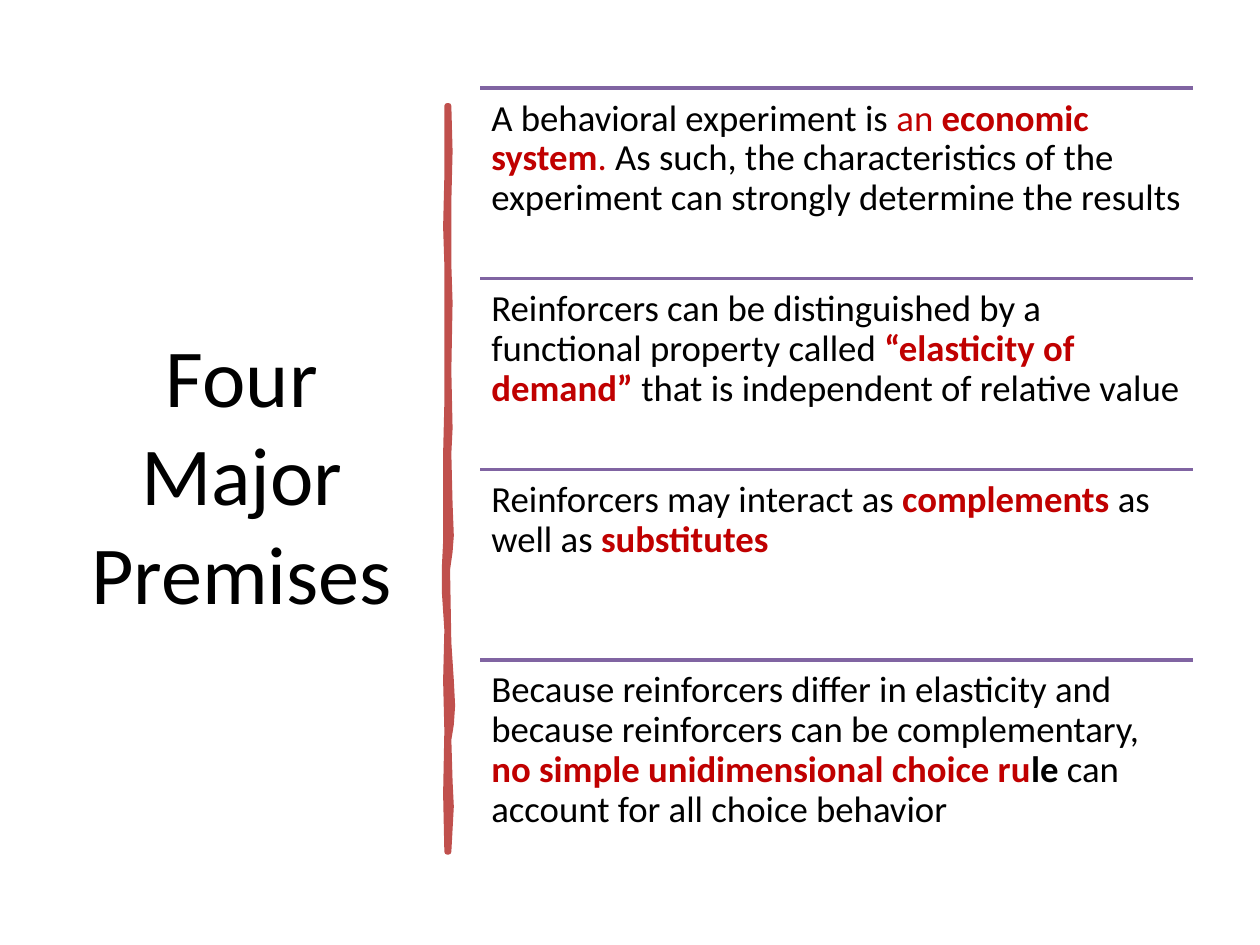
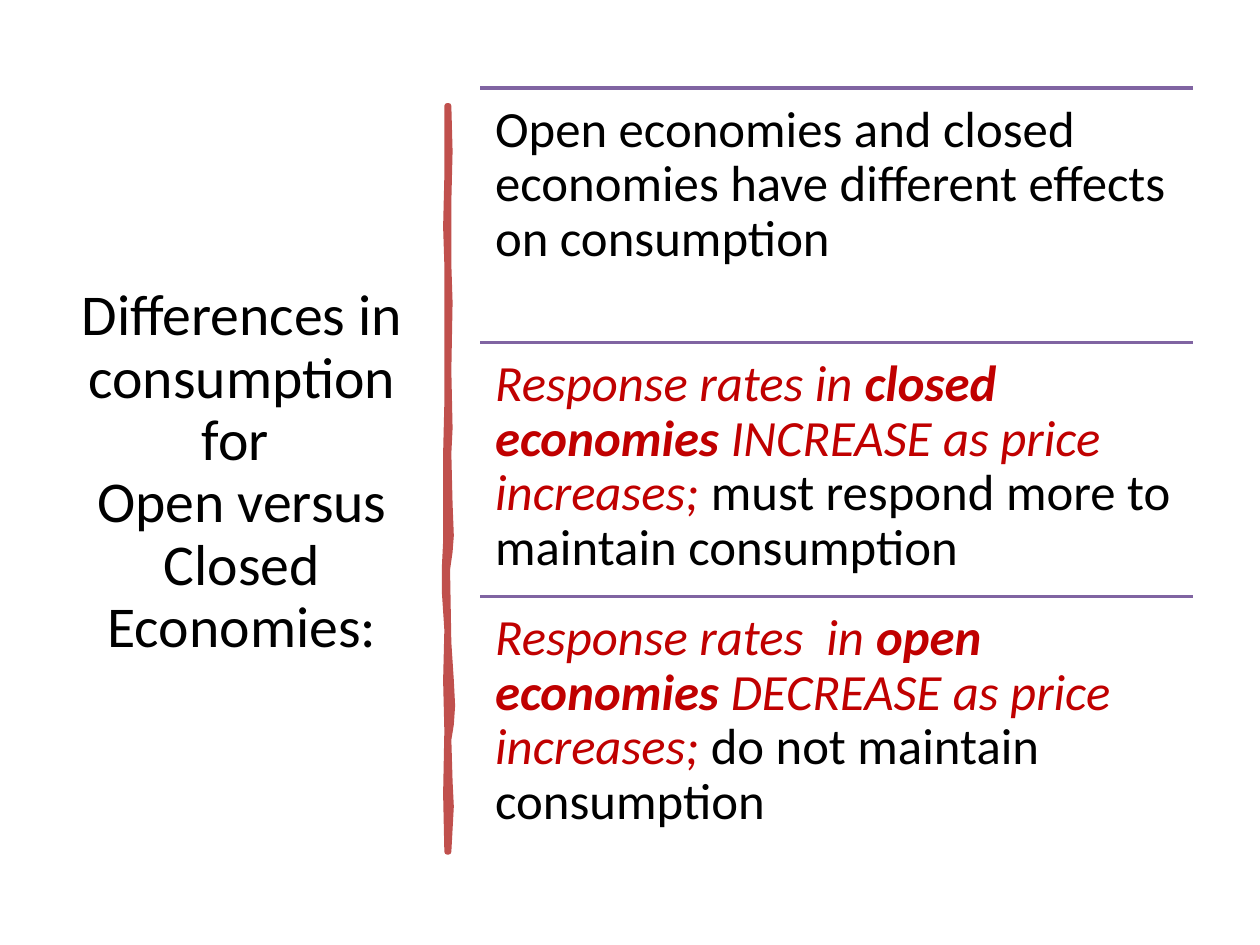
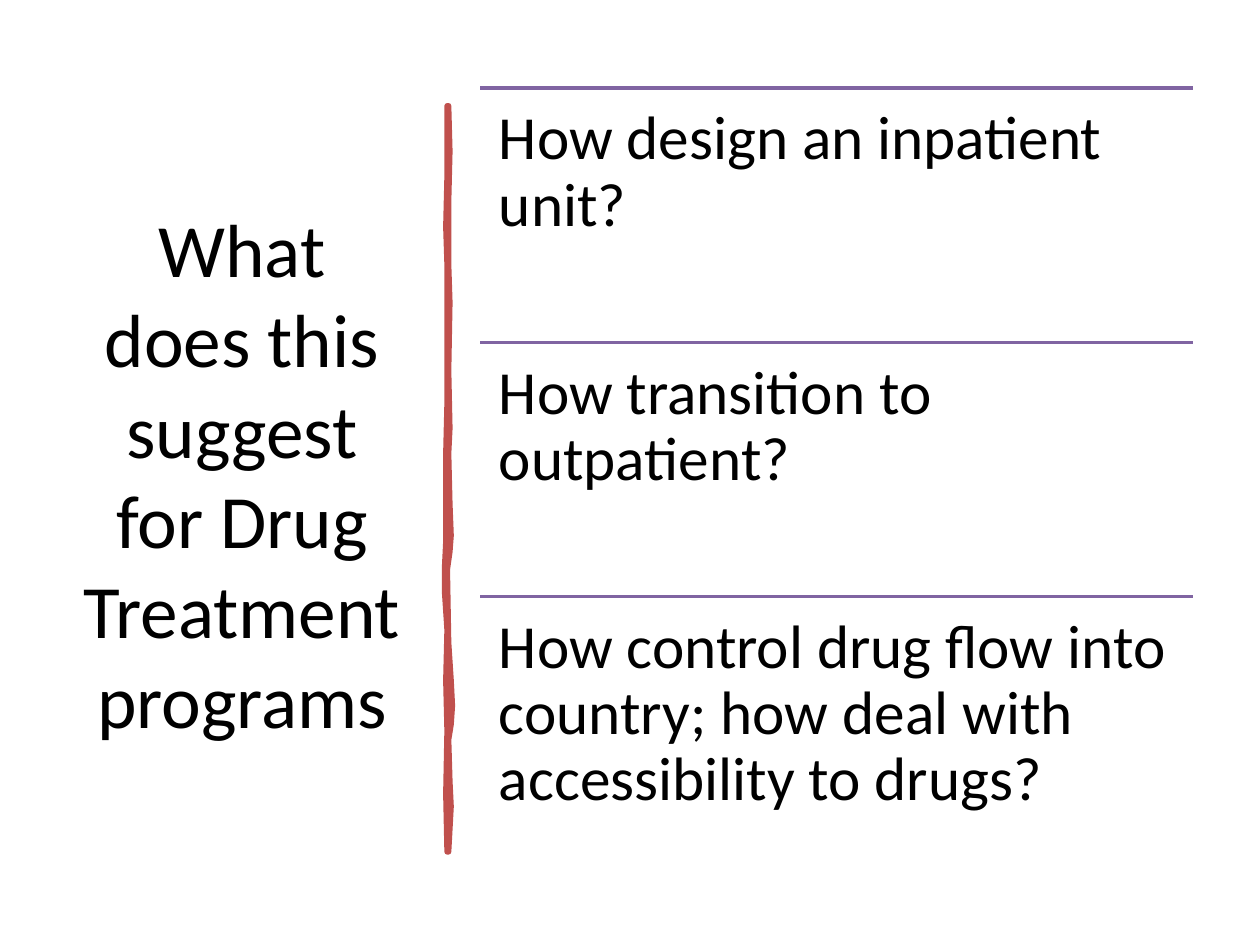
from dataclasses import dataclass

from lxml.etree import SubElement
from pptx import Presentation
from pptx.dml.color import RGBColor
from pptx.enum.shapes import MSO_CONNECTOR
from pptx.enum.text import MSO_ANCHOR, MSO_AUTO_SIZE, PP_ALIGN
from pptx.oxml.ns import qn
from pptx.slide import Slide
from pptx.util import Inches, Pt

BLACK = RGBColor(0x00, 0x00, 0x00)
RED = RGBColor(0xC0, 0x00, 0x00)
BRICK = RGBColor(0xC0, 0x50, 0x4D)
PURPLE = RGBColor(0x80, 0x64, 0xA2)
FONT = "Calibri"
TITLE_ONLY = 5

# Column of points, in inches
LIST_LEFT, LIST_TOP = 3.81, 0.7
LIST_WIDTH, LIST_HEIGHT = 5.66, 6.05

# Hand-drawn divider: down the right edge, back up the left edge
DIVIDER_EDGE = (
    (3.56, 0.84), (3.57, 1.2), (3.56, 1.6), (3.56, 2.1), (3.57, 2.4),
    (3.56, 2.94), (3.57, 3.4), (3.56, 3.6), (3.57, 4.0), (3.58, 4.25),
    (3.57, 4.38), (3.55, 4.52), (3.56, 5.1), (3.58, 5.4), (3.59, 5.6),
    (3.58, 5.75), (3.56, 5.87), (3.57, 6.2), (3.58, 6.4), (3.56, 6.76),
    (3.55, 6.76), (3.54, 6.3), (3.55, 5.8), (3.54, 5.4), (3.55, 5.0),
    (3.53, 4.7), (3.53, 4.5), (3.54, 4.3), (3.54, 3.6), (3.55, 3.2),
    (3.55, 2.5), (3.55, 2.1), (3.54, 1.8), (3.55, 1.4), (3.55, 0.84),
)


@dataclass(frozen=True)
class Span:
    text: str
    color: RGBColor = BLACK
    bold: bool = False
    italic: bool = False


Point = tuple[Span, ...]


@dataclass(frozen=True)
class Page:
    title: str
    title_size: int
    title_spacing: float
    point_size: int
    inset: float
    points: tuple[Point, ...]


PAGES = (
    Page("Four Major Premises", 47, 1.0, 21, 0.09, (
        (
            Span("A behavioral experiment is "),
            Span("an ", RED),
            Span("economic system", RED, bold=True),
            Span(". ", RED),
            Span("As such, the characteristics of the experiment can "
                 "strongly determine the results"),
        ),
        (
            Span("Reinforcers can be distinguished by a functional property called "),
            Span("“elasticity of demand” ", RED, bold=True),
            Span("that is independent of relative value"),
        ),
        (
            Span("Reinforcers may interact as "),
            Span("complements ", RED, bold=True),
            Span("as well as "),
            Span("substitutes", RED, bold=True),
        ),
        (
            Span("Because reinforcers differ in elasticity and because "
                 "reinforcers can be complementary, "),
            Span("no simple unidimensional choice ru", RED, bold=True),
            Span("le", bold=True),
            Span(" can account for all choice behavior"),
        ),
    )),
    Page("Differences in consumption for \vOpen versus Closed Economies:",
         33, 0.9, 29, 0.12, (
        (Span("Open economies and closed economies have different effects "
              "on consumption"),),
        (
            Span("Response rates in ", RED, italic=True),
            Span("closed economies", RED, bold=True, italic=True),
            Span(" INCREASE as price increases;", RED, italic=True),
            Span(" must respond more to maintain consumption"),
        ),
        (
            Span("Response rates  in ", RED, italic=True),
            Span("open economies", RED, bold=True, italic=True),
            Span(" DECREASE as price increases; ", RED, italic=True),
            Span("do not maintain consumption"),
        ),
    )),
    Page("What does this suggest for Drug Treatment programs", 43, 1.0, 35, 0.15, (
        (Span("How design an inpatient unit?"),),
        (Span("How transition to outpatient?"),),
        (Span("How control drug flow into country; how deal with "
              "accessibility to drugs?"),),
    )),
)


def set_title(slide: Slide, page: Page) -> None:
    title = slide.shapes.title
    title.left, title.top = Inches(0.52), Inches(0.7)
    title.width, title.height = Inches(2.8), Inches(6.11)
    frame = title.text_frame
    frame.text = page.title
    frame.word_wrap = True
    frame.auto_size = MSO_AUTO_SIZE.NONE
    frame.vertical_anchor = MSO_ANCHOR.MIDDLE
    para = frame.paragraphs[0]
    para.alignment = PP_ALIGN.CENTER
    para.line_spacing = page.title_spacing
    para.font.name = FONT
    para.font.size = Pt(page.title_size)
    para.font.color.rgb = BLACK


def add_divider(slide: Slide) -> None:
    corners = [(Inches(x), Inches(y)) for x, y in DIVIDER_EDGE]
    builder = slide.shapes.build_freeform(*corners[0])
    builder.add_line_segments(corners[1:], close=True)
    divider = builder.convert_to_shape()
    divider.shadow.inherit = False
    divider.fill.solid()
    divider.fill.fore_color.rgb = BRICK
    divider.line.color.rgb = BRICK
    divider.line.width = Pt(3.25)
    SubElement(divider.element.spPr.find(qn("a:ln")), qn("a:round"))


def add_rule(slide: Slide, top: float) -> None:
    rule = slide.shapes.add_connector(
        MSO_CONNECTOR.STRAIGHT, Inches(LIST_LEFT), Inches(top),
        Inches(LIST_LEFT + LIST_WIDTH), Inches(top))
    rule.line.color.rgb = PURPLE
    rule.line.width = Pt(2)
    SubElement(rule.element.spPr, qn("a:effectLst"))


def add_point(slide: Slide, page: Page, point: Point, top: float, height: float) -> None:
    box = slide.shapes.add_textbox(
        Inches(LIST_LEFT), Inches(top), Inches(LIST_WIDTH), Inches(height))
    frame = box.text_frame
    frame.word_wrap = True
    frame.margin_left = frame.margin_right = Inches(page.inset)
    frame.margin_top = frame.margin_bottom = Inches(page.inset)
    para = frame.paragraphs[0]
    para.line_spacing = 0.9
    para.font.name = FONT
    para.font.size = Pt(page.point_size)
    for span in point:
        run = para.add_run()
        run.text = span.text
        run.font.color.rgb = span.color
        run.font.bold = span.bold
        run.font.italic = span.italic


def main() -> None:
    deck = Presentation()
    deck.slide_width, deck.slide_height = Inches(10), Inches(7.5)
    for page in PAGES:
        slide = deck.slides.add_slide(deck.slide_layouts[TITLE_ONLY])
        set_title(slide, page)
        add_divider(slide)
        # Points share the column height equally, each under its own rule
        height = LIST_HEIGHT / len(page.points)
        for row, point in enumerate(page.points):
            top = LIST_TOP + row * height
            add_rule(slide, top)
            add_point(slide, page, point, top, height)
    deck.save("out.pptx")


if __name__ == "__main__":
    main()
